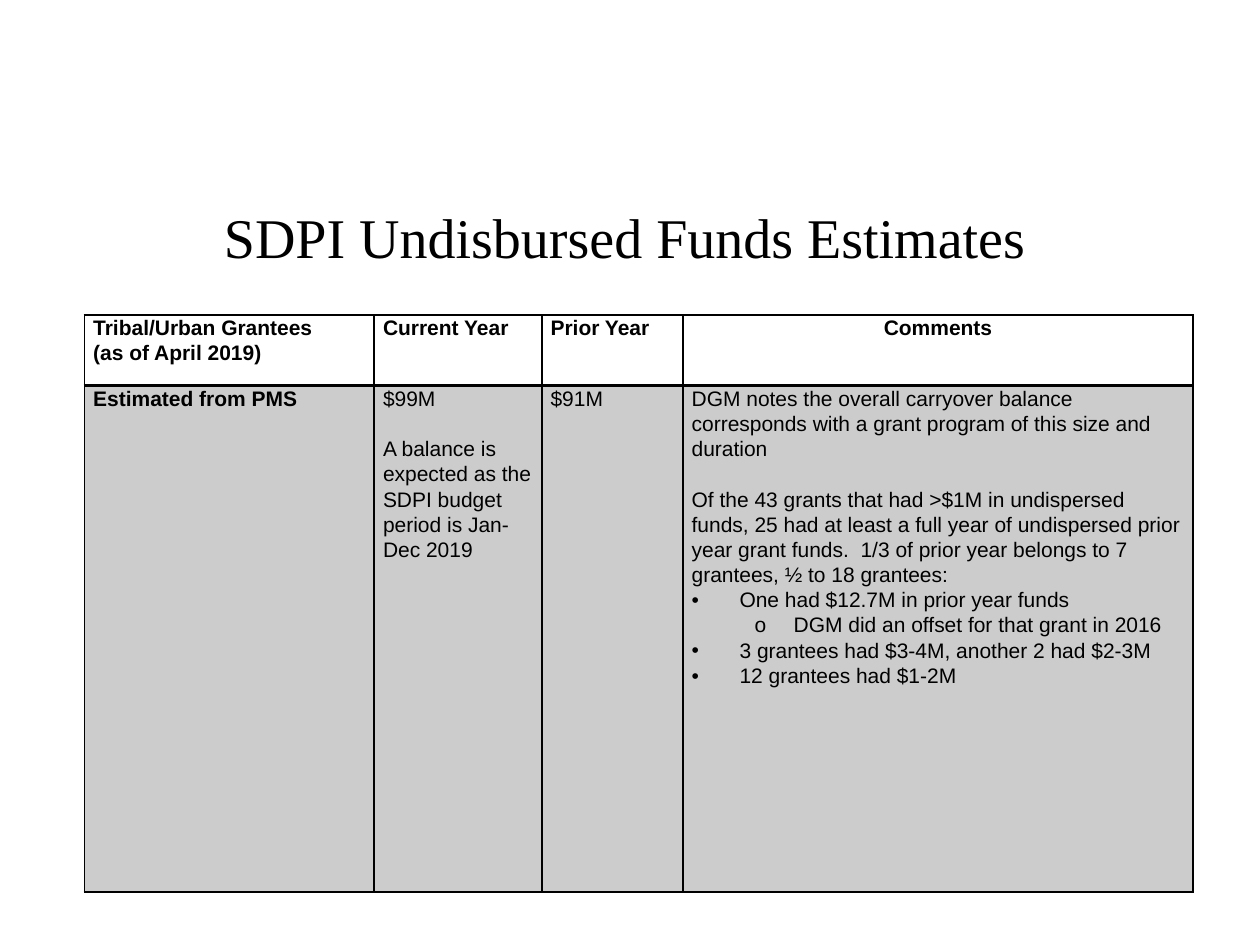
from lxml.etree import SubElement
from pptx import Presentation
from pptx.dml.color import RGBColor
from pptx.enum.text import MSO_ANCHOR, PP_ALIGN
from pptx.oxml import parse_xml
from pptx.oxml.ns import nsdecls, qn
from pptx.util import Inches, Pt

COLUMNS = [2.3, 1.33, 1.12, 4.05]
ROWS = [0.56, 4.02]
BLACK = "000000"
GAP = 14.5
HEADERS = [
    ["Tribal/Urban Grantees", "(as of April 2019)"],
    ["Current Year"],
    ["Prior Year"],
    ["Comments"],
]
BULLET = {"bullet": "•", "margin": 0.38, "hanging": 0.38}
SUB_BULLET = {"bullet": "o", "margin": 0.81, "hanging": 0.31, "level": 1}
ESTIMATES = [
    [("Estimated from PMS", {"bold": True})],
    [
        ("$99M", {}),
        ("A balance is expected as the SDPI budget period is Jan-Dec 2019", {"before": GAP}),
    ],
    [("$91M", {})],
    [
        ("DGM notes the overall carryover balance corresponds with a grant program "
         "of this size and duration", {}),
        ("Of the 43 grants that had >$1M in undispersed funds, 25 had at least a full year "
         "of undispersed prior year grant funds.  1/3 of prior year belongs to 7 grantees, "
         "½ to 18 grantees:", {"before": GAP}),
        ("One had $12.7M in prior year funds", BULLET),
        ("DGM did an offset for that grant in 2016", SUB_BULLET),
        ("3 grantees had $3-4M, another 2 had $2-3M", BULLET),
        ("12 grantees had $1-2M", BULLET),
    ],
]


def color(value):
    """Turn a hex string into a colour."""
    return RGBColor.from_string(value)


def add_bullet(para, bullet, margin, hanging):
    """Give a paragraph a bullet character and a hanging indent."""
    properties = para._p.get_or_add_pPr()
    properties.set("marL", str(Inches(margin)))
    properties.set("indent", str(-Inches(hanging)))
    SubElement(properties, qn("a:buFont")).set("typeface", "Arial")
    SubElement(properties, qn("a:buChar")).set("char", bullet)


def write(para, text, font="Arial", size=12, bold=False, align=PP_ALIGN.LEFT,
          spacing=1.07, before=0, bullet=None, margin=0, hanging=0, level=0):
    """Write formatted text into a paragraph."""
    if bullet:
        add_bullet(para, bullet, margin, hanging)
    para.level = level
    para.alignment = align
    para.line_spacing = spacing
    para.space_before = Pt(before)
    span = para.add_run()
    span.text = text
    span.font.name = font
    span.font.size = Pt(size)
    span.font.bold = bold
    span.font.color.rgb = color(BLACK)


def set_borders(cell, top=1, bottom=1):
    """Draw black lines on the four sides of a cell."""
    properties = cell._tc.get_or_add_tcPr()
    widths = {"lnL": 1, "lnR": 1, "lnT": top, "lnB": bottom}
    for position, (side, width) in enumerate(widths.items()):
        properties.insert(position, parse_xml(
            f'<a:{side} {nsdecls("a")} w="{Pt(width)}"><a:solidFill>'
            f'<a:srgbClr val="{BLACK}"/></a:solidFill></a:{side}>'))


def shade(cell, percent):
    """Fill a cell with black of the given opacity, or leave it clear."""
    if not percent:
        cell.fill.background()
        return
    cell.fill.solid()
    cell.fill.fore_color.rgb = color(BLACK)
    tint = cell._tc.tcPr.find(f'{qn("a:solidFill")}/{qn("a:srgbClr")}')
    SubElement(tint, qn("a:alpha")).set("val", str(percent * 1000))


def fill_cell(cell, lines, opacity=0, **borders):
    """Put paragraphs, shading and borders into a cell."""
    cell.margin_left = cell.margin_right = Inches(0.07)
    cell.margin_top = cell.margin_bottom = 0
    cell.vertical_anchor = MSO_ANCHOR.TOP
    frame = cell.text_frame
    for index, (text, style) in enumerate(lines):
        para = frame.add_paragraph() if index else frame.paragraphs[0]
        write(para, text, **style)
    shade(cell, opacity)
    set_borders(cell, **borders)


def add_title(page, deck, text):
    """Place the title in its placeholder, across the page."""
    box = page.shapes.title
    box.left, box.top = int(deck.slide_width * 0.046), deck.slide_height // 6
    box.width, box.height = int(deck.slide_width * 0.9), deck.slide_height // 6
    box.text_frame.vertical_anchor = MSO_ANCHOR.MIDDLE
    write(box.text_frame.paragraphs[0], text, font="Times New Roman", size=32,
          align=PP_ALIGN.CENTER, spacing=1.0)


def add_estimates(page, deck):
    """Add the table of estimates with its header row."""
    frame = page.shapes.add_table(
        len(ROWS), len(COLUMNS), int(deck.slide_width * 0.067), deck.slide_height // 3,
        Inches(sum(COLUMNS)), Inches(sum(ROWS)))
    table = frame.table
    table.first_row = table.horz_banding = False
    for row, height in zip(table.rows, ROWS):
        row.height = Inches(height)
    for index, width in enumerate(COLUMNS):
        table.columns[index].width = Inches(width)
        align = PP_ALIGN.CENTER if HEADERS[index] == ["Comments"] else PP_ALIGN.LEFT
        header = [(text, {"bold": True, "align": align}) for text in HEADERS[index]]
        fill_cell(table.cell(0, index), header, bottom=2)
        fill_cell(table.cell(1, index), ESTIMATES[index], opacity=20, top=2)


def main():
    """Build the slide and save it."""
    deck = Presentation()
    deck.slide_width, deck.slide_height = Inches(10), Inches(7.5)
    page = deck.slides.add_slide(deck.slide_layouts[5])
    add_title(page, deck, "SDPI Undisbursed Funds Estimates")
    add_estimates(page, deck)
    deck.save("out.pptx")


if __name__ == "__main__":
    main()
